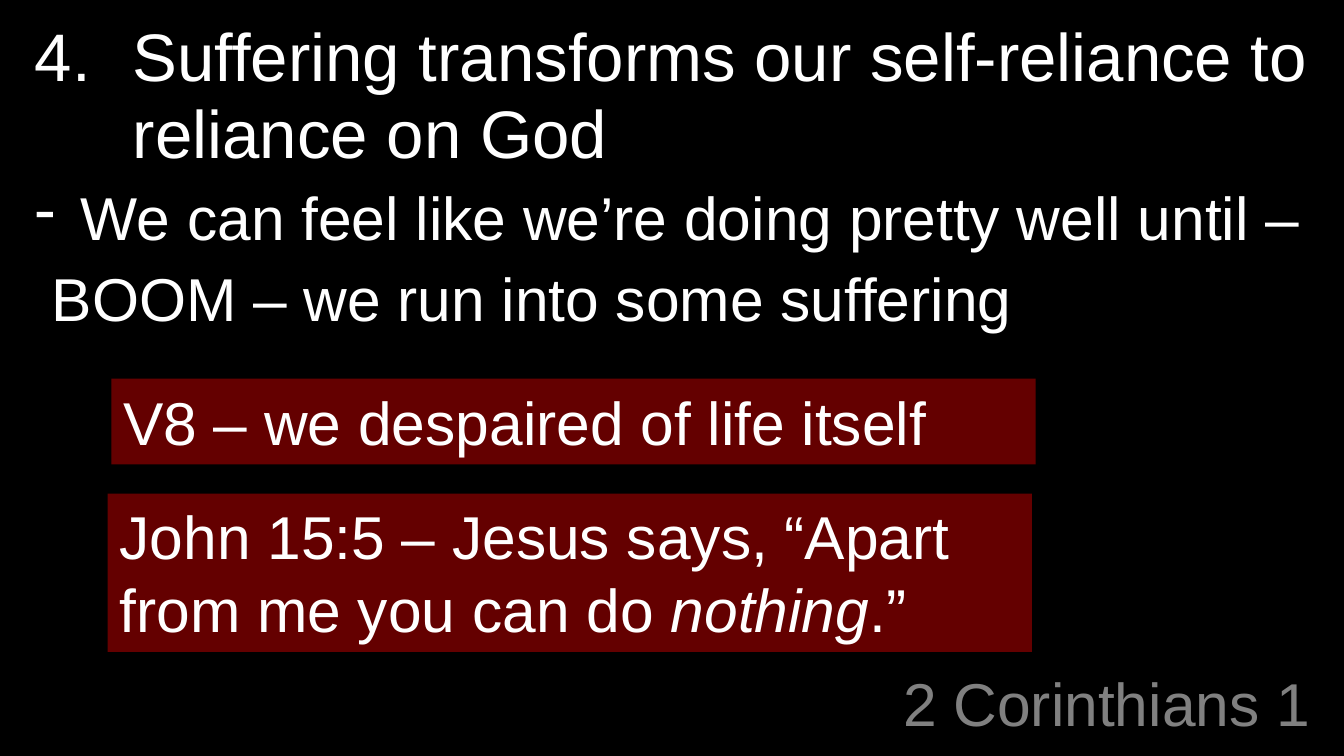
from dataclasses import dataclass
from typing import Optional

from lxml import etree
from pptx import Presentation
from pptx.dml.color import RGBColor
from pptx.enum import shapes, text
from pptx.util import Inches, Pt


@dataclass(frozen=True)
class Theme:
    font: str = "Arial"
    background: RGBColor = RGBColor(0, 0, 0)
    body: RGBColor = RGBColor(255, 255, 255)
    reference: RGBColor = RGBColor(128, 128, 128)
    verse_fill: RGBColor = RGBColor(100, 0, 0)
    point_size: int = 40
    text_size: int = 36


@dataclass(frozen=True)
class Span:
    words: str
    italic: bool = False


@dataclass(frozen=True)
class Point:
    words: str
    size: int
    indent: float
    bullet: Optional[tuple[str, dict[str, str]]] = None


@dataclass(frozen=True)
class Verse:
    left: float
    top: float
    height: float
    spans: tuple[Span, ...]


THEME = Theme()
VERSE_WIDTH = 7.64

POINTS = (
    Point("Suffering transforms our self-reliance to reliance on God", THEME.point_size, 0.81,
          ("buAutoNum", {"type": "arabicPeriod", "startAt": "4"})),
    Point("We can feel like we’re doing pretty well until –", THEME.text_size, 0.38,
          ("buChar", {"char": "-"})),
    Point("BOOM – we run into some suffering", THEME.text_size, 0.14),
)
VERSES = (
    Verse(0.92, 3.13, 0.71, (Span("V8 – we despaired of life itself"),)),
    Verse(0.89, 4.08, 1.31, (
        Span("John 15:5 – Jesus says, “Apart from me you can do "),
        Span("nothing", italic=True),
        Span(".”"),
    )),
)


def apply(target, values: dict) -> None:
    for name, value in values.items():
        setattr(target, name, value)


def place(box, left: float, top: float, width: float, height: float) -> None:
    apply(box, {"left": Inches(left), "top": Inches(top),
                "width": Inches(width), "height": Inches(height)})


def add_span(para, span: Span, size: int, color: RGBColor) -> None:
    run = para.add_run()
    run.text = span.words
    apply(run.font, {"name": THEME.font, "size": Pt(size), "italic": span.italic})
    run.font.color.rgb = color


def set_indent(para, point: Point) -> None:
    """Set the left margin, with a hanging bullet where the point has one."""
    properties = para._p.get_or_add_pPr()
    margin = Inches(point.indent)
    properties.set("marL", str(margin))
    properties.set("indent", str(-margin if point.bullet else 0))
    tag, attributes = point.bullet or ("buNone", {})
    namespace = properties.nsmap["a"]
    etree.SubElement(properties, f"{{{namespace}}}{tag}", attributes)


def add_reference(page) -> None:
    title = page.shapes.title
    place(title, 7.06, 5.56, 3.87, 0.59)
    apply(title.text_frame, {"word_wrap": True, "auto_size": text.MSO_AUTO_SIZE.NONE,
                             "vertical_anchor": text.MSO_ANCHOR.BOTTOM})
    para = title.text_frame.paragraphs[0]
    apply(para, {"alignment": text.PP_ALIGN.RIGHT, "line_spacing": 0.8})
    add_span(para, Span("2 Corinthians 1"), THEME.text_size, THEME.reference)


def add_points(page) -> None:
    box = page.shapes.add_textbox(0, 0, 0, 0)
    place(box, 0.19, 0.12, 10.74, 5.29)
    frame = box.text_frame
    frame.word_wrap = True
    for number, point in enumerate(POINTS):
        para = frame.add_paragraph() if number else frame.paragraphs[0]
        apply(para, {"line_spacing": 0.95, "space_before": Pt(point.size * 0.2)})
        set_indent(para, point)
        add_span(para, Span(point.words), point.size, THEME.body)


def add_verse(page, verse: Verse) -> None:
    box = page.shapes.add_shape(shapes.MSO_SHAPE.ROUNDED_RECTANGLE, 0, 0, 0, 0)
    place(box, verse.left, verse.top, VERSE_WIDTH, verse.height)
    box.adjustments[0] = 0
    box.shadow.inherit = False
    box.fill.solid()
    box.fill.fore_color.rgb = THEME.verse_fill
    box.line.fill.background()
    apply(box.text_frame, {"word_wrap": True,
                           "auto_size": text.MSO_AUTO_SIZE.SHAPE_TO_FIT_TEXT,
                           "vertical_anchor": text.MSO_ANCHOR.TOP})
    para = box.text_frame.paragraphs[0]
    para.alignment = text.PP_ALIGN.LEFT
    for span in verse.spans:
        add_span(para, span, THEME.text_size, THEME.body)


def main() -> None:
    deck = Presentation()
    apply(deck, {"slide_width": Inches(11.11), "slide_height": Inches(6.25)})
    page = deck.slides.add_slide(deck.slide_layouts.get_by_name("Title Only"))
    page.background.fill.solid()
    page.background.fill.fore_color.rgb = THEME.background
    add_reference(page)
    add_points(page)
    for verse in VERSES:
        add_verse(page, verse)
    deck.save("out.pptx")


if __name__ == "__main__":
    main()
